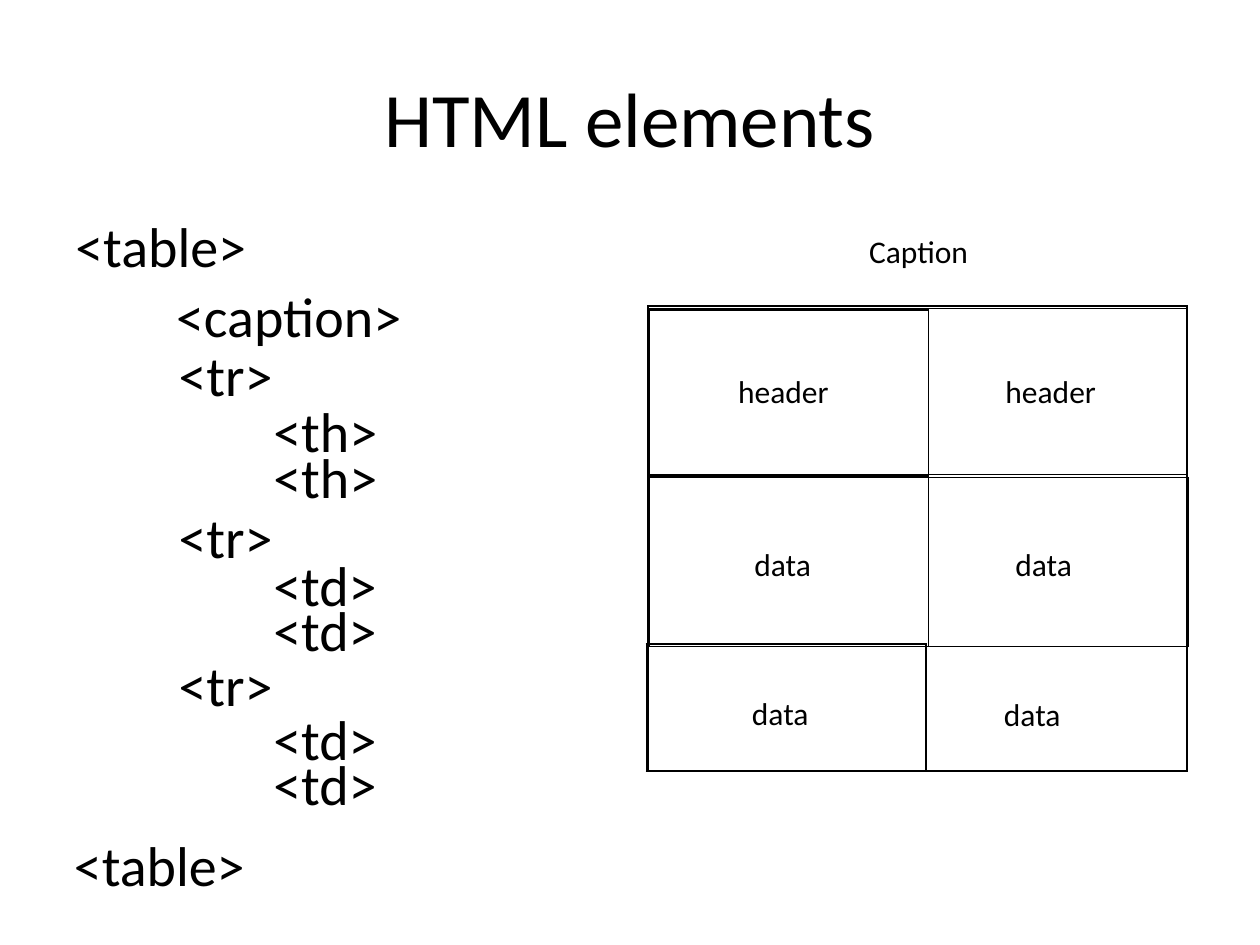
from lxml.etree import SubElement
from pptx import Presentation
from pptx.dml.color import RGBColor
from pptx.enum.text import MSO_ANCHOR, MSO_AUTO_SIZE, PP_ALIGN
from pptx.oxml.ns import qn
from pptx.util import Cm, Pt

FONT = "Calibri"
BLACK = "000000"
SLIDE_WIDTH, SLIDE_HEIGHT = 25.4, 19.05
TEXT_WIDTH = 22.86
PAIR_GAP = 0.92  # between the two cell tags of one row

# Rows of the tag listing: top of <tr>, top of first cell tag, cell tag
TAG_ROWS = [
    (6.73, 7.87, "<th>"),
    (10.01, 10.97, "<td>"),
    (12.98, 14.07, "<td>"),
]

# Table outlines: left, top, width, height
FRAMES = [
    (13.06, 6.22, 10.87, 9.32),  # whole table
    (13.06, 6.17, 10.87, 3.4),   # header row
    (13.08, 9.63, 10.87, 3.4),   # data row
    (13.08, 6.25, 5.64, 3.35),   # left header
    (13.08, 9.58, 5.64, 3.45),   # left data
    (13.03, 12.98, 5.64, 2.57),  # left data, last row
]

# Labels: text, left, top, width
LABELS = [
    ("Caption", 17.27, 4.55, 2.67),
    ("header", 14.63, 7.37, 2.67),
    ("header", 20.02, 7.37, 2.67),
    ("data", 14.96, 10.87, 1.83),
    ("data", 20.22, 10.87, 1.83),
    ("data", 14.91, 13.87, 1.83),
    ("data", 19.99, 13.89, 1.91),
]


def color(hex_string):
    return RGBColor.from_string(hex_string)


def add_text(slide, text, left, top, width, height, size):
    shape = slide.shapes.add_textbox(Cm(left), Cm(top), Cm(width), Cm(height))
    shape.text_frame.word_wrap = True
    paragraph = shape.text_frame.paragraphs[0]
    paragraph.text = text
    paragraph.font.name = FONT
    paragraph.font.size = Pt(size)
    paragraph.font.color.rgb = color(BLACK)
    return shape


def add_title(slide, text):
    shape = add_text(slide, text, 1.27, 0.76, TEXT_WIDTH, 3.18, 44)
    shape.text_frame.vertical_anchor = MSO_ANCHOR.MIDDLE
    shape.text_frame.paragraphs[0].alignment = PP_ALIGN.CENTER


def add_tag(slide, text, left, top):
    width = min(TEXT_WIDTH, SLIDE_WIDTH - left)
    add_text(slide, text, left, top, width, 2.06, 32)


def add_label(slide, text, left, top, width):
    shape = add_text(slide, text, left, top, width, 1.02, 18)
    shape.text_frame.auto_size = MSO_AUTO_SIZE.SHAPE_TO_FIT_TEXT


def add_frame(slide, left, top, width, height):
    """Add a table of one empty, unfilled cell with a border all round."""
    graphic_frame = slide.shapes.add_table(
        1, 1, Cm(left), Cm(top), Cm(width), Cm(height))
    cell = graphic_frame.table.cell(0, 0)
    properties = cell._tc.get_or_add_tcPr()
    for side in ("a:lnL", "a:lnR", "a:lnT", "a:lnB"):
        line = SubElement(properties, qn(side), w=str(Pt(1)))
        fill = SubElement(line, qn("a:solidFill"))
        SubElement(fill, qn("a:srgbClr"), val=BLACK)
    cell.fill.background()


def main():
    presentation = Presentation()
    presentation.slide_width = Cm(SLIDE_WIDTH)
    presentation.slide_height = Cm(SLIDE_HEIGHT)
    slide = presentation.slides.add_slide(presentation.slide_layouts[6])

    add_title(slide, "HTML elements")

    # Tag listing
    add_tag(slide, "<table>", 1.27, 4.14)
    add_tag(slide, "<caption>", 3.3, 5.56)
    for row_top, cell_top, cell_tag in TAG_ROWS:
        add_tag(slide, "<tr>", 3.35, row_top)
        for index in range(2):
            add_tag(slide, cell_tag, 5.26, cell_top + index * PAIR_GAP)
    add_tag(slide, "<table>", 1.24, 16.61)

    # Example table
    for frame in FRAMES:
        add_frame(slide, *frame)
    for label in LABELS:
        add_label(slide, *label)

    presentation.save("out.pptx")


if __name__ == "__main__":
    main()
